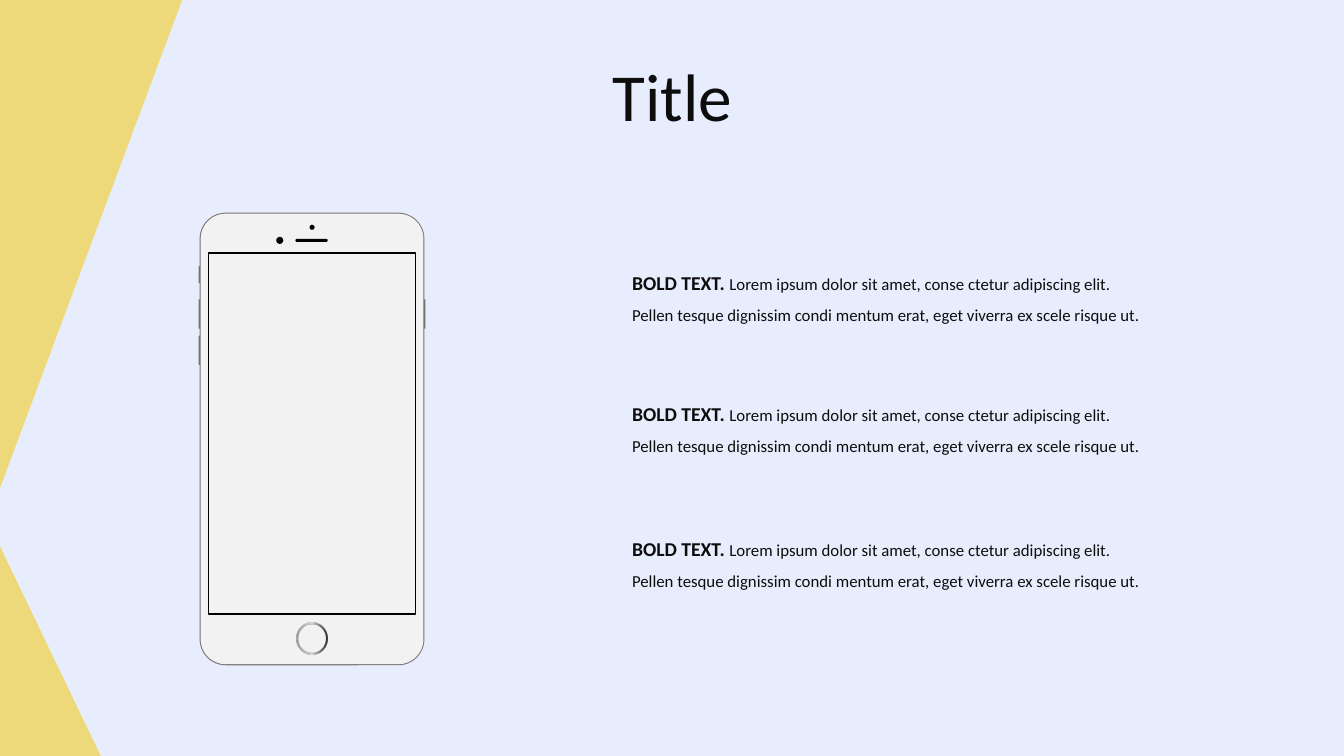
from lxml import etree
from pptx import Presentation
from pptx.dml.color import RGBColor
from pptx.enum.shapes import MSO_SHAPE
from pptx.enum.text import MSO_ANCHOR, MSO_AUTO_SIZE, PP_ALIGN
from pptx.oxml.ns import qn
from pptx.util import Inches, Pt

TRIANGLE = MSO_SHAPE.RIGHT_TRIANGLE
RECTANGLE = MSO_SHAPE.RECTANGLE
ROUNDED = MSO_SHAPE.ROUNDED_RECTANGLE
OVAL = MSO_SHAPE.OVAL
DONUT = MSO_SHAPE.DONUT
TOP = MSO_ANCHOR.TOP
FIT_SHAPE = MSO_AUTO_SIZE.SHAPE_TO_FIT_TEXT
CENTER = PP_ALIGN.CENTER

BACKGROUND = RGBColor(0xE7, 0xED, 0xFD)
YELLOW = RGBColor(0xED, 0xD9, 0x7A)
EDGE_GRAY = RGBColor(0x76, 0x71, 0x71)
PHONE_GRAY = RGBColor(0xF2, 0xF2, 0xF2)
BLACK = RGBColor(0, 0, 0)
TEXT_COLOR = RGBColor(0x0D, 0x0D, 0x0D)
RING_STOPS = [(0, "979797", 100), (50, "D7D7D7", 100), (100, "000000", 80)]

presentation = Presentation()
presentation.slide_width = Inches(13.33)
presentation.slide_height = Inches(7.5)
slide = presentation.slides.add_slide(presentation.slide_layouts[5])
slide.background.fill.solid()
slide.background.fill.fore_color.rgb = BACKGROUND


def add_filled(kind, left, top, width, height, color=None, radius=None):
    shape = slide.shapes.add_shape(
        kind, Inches(left), Inches(top), Inches(width), Inches(height))
    shape.shadow.inherit = False
    shape.line.fill.background()
    if color is None:
        shape.fill.background()
    else:
        shape.fill.solid()
        shape.fill.fore_color.rgb = color
    if radius is not None:
        shape.adjustments[0] = radius / min(width, height)
    return shape


def add_run(paragraph, text, size, bold=False):
    run = paragraph.add_run()
    run.text = text
    run.font.color.rgb = TEXT_COLOR
    formats = {"name": "Calibri", "size": Pt(size), "bold": bold}
    for name, value in formats.items():
        setattr(run.font, name, value)


# Yellow corners
add_filled(TRIANGLE, 0, 5.42, 1, 2.08, YELLOW)
upper_corner = add_filled(TRIANGLE, 0, -0.01, 1.81, 4.85, YELLOW)
upper_corner.rotation = 180
upper_corner._element.spPr.find(qn("a:xfrm")).set("flipH", "1")

# Phone side buttons: left, top, height
for left, top, height in [(1.97, 2.64, 0.17), (1.97, 2.97, 0.29),
                          (1.97, 3.33, 0.29), (4.2, 2.97, 0.29)]:
    add_filled(RECTANGLE, left, top, 0.02, height, EDGE_GRAY)

# Phone body, camera, sensor and speaker
add_filled(ROUNDED, 1.98, 2.11, 2.23, 4.49, EDGE_GRAY, 0.26)
add_filled(ROUNDED, 1.99, 2.12, 2.21, 4.47, PHONE_GRAY, 0.25)
add_filled(OVAL, 2.74, 2.35, 0.07, 0.07, BLACK)
add_filled(OVAL, 3.07, 2.23, 0.05, 0.05, BLACK)
add_filled(ROUNDED, 2.93, 2.37, 0.32, 0.03, BLACK, 0.015)

# Home button with a gradient ring
ring = add_filled(DONUT, 2.94, 6.18, 0.31, 0.31, radius=0.02)
ring_fill = ring._element.spPr.find(qn("a:noFill"))
gradient = etree.Element(qn("a:gradFill"))
stops = etree.SubElement(gradient, qn("a:gsLst"))
for position, color, opacity in RING_STOPS:
    stop = etree.SubElement(stops, qn("a:gs"), pos=str(position * 1000))
    stop_color = etree.SubElement(stop, qn("a:srgbClr"), val=color)
    if opacity < 100:
        etree.SubElement(stop_color, qn("a:alpha"), val=str(opacity * 1000))
etree.SubElement(gradient, qn("a:lin"), ang="0")
ring_fill.getparent().replace(ring_fill, gradient)

# Phone screen
screen = add_filled(RECTANGLE, 2.07, 2.51, 2.05, 3.58)
screen.line.color.rgb = BLACK
screen.line.width = Pt(1)

# Title
title = slide.shapes.title
title_place = {"left": 3.06, "top": 0.49, "width": 7.22, "height": 0.91}
for name, value in title_place.items():
    setattr(title, name, Inches(value))
title.text_frame.vertical_anchor = TOP
title.text_frame.auto_size = FIT_SHAPE
title_paragraph = title.text_frame.paragraphs[0]
title_paragraph.alignment = CENTER
add_run(title_paragraph, "Title", 48)

# Text blocks
for top in (2.52, 3.82, 5.16):
    box = slide.shapes.add_textbox(
        Inches(6.17), Inches(top), Inches(5.38), Inches(0.73))
    box.text_frame.word_wrap = True
    box.text_frame.auto_size = FIT_SHAPE
    paragraph = box.text_frame.paragraphs[0]
    paragraph.line_spacing = 1.5
    add_run(paragraph, "BOLD TEXT. ", 14, bold=True)
    add_run(paragraph, "Lorem ipsum dolor sit amet, conse ctetur adipiscing elit. "
            "Pellen tesque dignissim condi mentum erat, eget viverra ex "
            "scele risque ut.", 12)

presentation.save("out.pptx")
